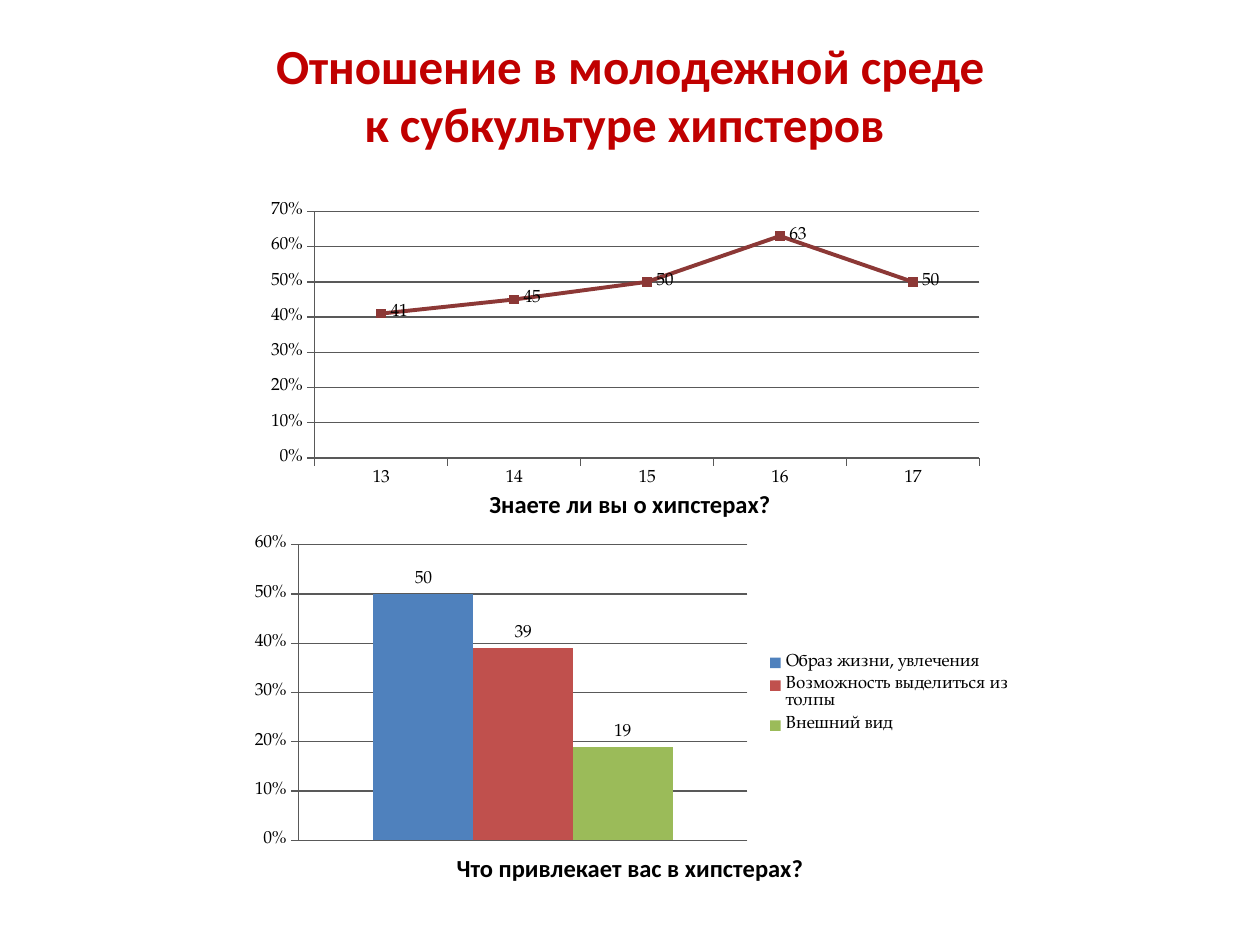
"""Build a slide with two survey charts about the hipster subculture."""
from lxml import etree
from pptx import Presentation
from pptx.chart.data import CategoryChartData
from pptx.dml.color import RGBColor
from pptx.enum.chart import XL_CHART_TYPE, XL_LABEL_POSITION, XL_LEGEND_POSITION, XL_MARKER_STYLE, XL_TICK_MARK
from pptx.enum.text import PP_ALIGN
from pptx.oxml.ns import qn
from pptx.util import Inches, Pt

LINE, COLUMN = XL_CHART_TYPE.LINE_MARKERS, XL_CHART_TYPE.COLUMN_CLUSTERED
LABEL_RIGHT, LABEL_ABOVE = XL_LABEL_POSITION.RIGHT, XL_LABEL_POSITION.OUTSIDE_END
LEGEND_RIGHT = XL_LEGEND_POSITION.RIGHT
SQUARE = XL_MARKER_STYLE.SQUARE
OUTSIDE, NO_TICK = XL_TICK_MARK.OUTSIDE, XL_TICK_MARK.NONE
CENTER = PP_ALIGN.CENTER

THEME = {
    "heading_font": "Calibri",
    "chart_font": "TeX Gyre Pagella",
    "title_size": Pt(28),
    "caption_size": Pt(14),
    "chart_size": Pt(10),
    "title": RGBColor.from_string("C00000"),
    "text": RGBColor.from_string("000000"),
    "grid": RGBColor.from_string("595959"),
    "line": RGBColor.from_string("8C3836"),
    "bars": [RGBColor.from_string(code) for code in ("4F81BD", "C0504D", "9BBB59")],
}

deck = Presentation()
deck.slide_width, deck.slide_height = Inches(10), Inches(7.5)
page = deck.slides.add_slide(deck.slide_layouts[6])


def add_text(lines, *, left, top, width, height, size, color):
    box = page.shapes.add_textbox(Inches(left), Inches(top), Inches(width), Inches(height))
    box.text_frame.word_wrap = True
    for index, line in enumerate(lines):
        para = box.text_frame.paragraphs[0] if index == 0 else box.text_frame.add_paragraph()
        para.alignment = CENTER
        span = para.add_run()
        span.text = line
        span.font.name = THEME["heading_font"]
        span.font.size = size
        span.font.bold = True
        span.font.color.rgb = color


def set_layout(parent, position, shares, inner=False):
    for old in parent.findall(qn("c:layout")):
        parent.remove(old)
    layout = etree.Element(qn("c:layout"))
    manual = etree.SubElement(layout, qn("c:manualLayout"))
    settings = [("layoutTarget", "inner")] if inner else []
    settings += [("xMode", "edge"), ("yMode", "edge"), *zip("xywh", shares)]
    for tag, value in settings:
        etree.SubElement(manual, qn(f"c:{tag}")).set("val", str(value))
    parent.insert(position, layout)


add_text(["Отношение в молодежной среде", "к субкультуре хипстеров "],
         left=0, top=0.23, width=10, height=1.04, size=THEME["title_size"], color=THEME["title"])
for caption, top in (("Знаете ли вы о хипстерах?", 3.83), ("Что привлекает вас в хипстерах?", 6.72)):
    add_text([caption], left=2.03, top=top, width=5.94, height=0.34,
             size=THEME["caption_size"], color=THEME["text"])

awareness = CategoryChartData()
awareness.categories = ["13", "14", "15", "16", "17"]
awareness.add_series("Series 1", [41, 45, 50, 63, 50])

attraction = CategoryChartData()
attraction.categories = ["1"]
for name, share in (("Образ жизни, увлечения", 50), ("Возможность выделиться из толпы", 39), ("Внешний вид", 19)):
    attraction.add_series(name, [share])

charts = []
for kind, data, frame, plot_shares, maximum, label_place in (
    (LINE, awareness, (2.03, 1.56, 5.86, 2.36), (0.08, 0.05, 0.9, 0.83), 70, LABEL_RIGHT),
    (COLUMN, attraction, (1.87, 4.22, 6.25, 2.58), (0.08, 0.04, 0.57, 0.91), 60, LABEL_ABOVE),
):
    chart = page.shapes.add_chart(kind, *map(Inches, frame), data).chart
    chart.has_title = False
    chart.has_legend = False
    chart.font.name = THEME["chart_font"]
    chart.font.size = THEME["chart_size"]
    chart.font.color.rgb = THEME["text"]
    set_layout(chart.plots[0]._element.getparent(), 0, plot_shares, inner=True)

    values = chart.value_axis
    values.minimum_scale, values.maximum_scale, values.major_unit = 0, maximum, 10
    values.has_major_gridlines = True
    values.tick_labels.number_format = "General\\%"
    values.tick_labels.number_format_is_linked = False
    for axis in (values, chart.category_axis):
        axis.major_tick_mark, axis.minor_tick_mark = OUTSIDE, NO_TICK
        axis.format.line.color.rgb = THEME["grid"]
        axis.format.line.width = Pt(0.75)
    values.major_gridlines.format.line.color.rgb = THEME["grid"]
    values.major_gridlines.format.line.width = Pt(0.75)

    plot = chart.plots[0]
    plot.vary_by_categories = False
    plot.has_data_labels = True
    plot.data_labels.show_value = True
    plot.data_labels.position = label_place
    charts.append(chart)

line_chart, column_chart = charts
trend = line_chart.plots[0].series[0]
trend.smooth = False
trend.format.line.color.rgb = THEME["line"]
trend.format.line.width = Pt(2.25)
trend.marker.style = SQUARE
trend.marker.size = 5
trend.marker.format.fill.solid()
trend.marker.format.fill.fore_color.rgb = THEME["line"]
trend.marker.format.line.color.rgb = THEME["line"]

column_chart.category_axis.visible = False
column_chart.plots[0].gap_width = 150
column_chart.plots[0].overlap = 0
for bar, color in zip(column_chart.plots[0].series, THEME["bars"]):
    bar.format.fill.solid()
    bar.format.fill.fore_color.rgb = color
column_chart.has_legend = True
column_chart.legend.position = LEGEND_RIGHT
column_chart.legend.include_in_layout = False
set_layout(column_chart.legend._element, 1, (0.67, 0.36, 0.32, 0.28))

deck.save("out.pptx")
